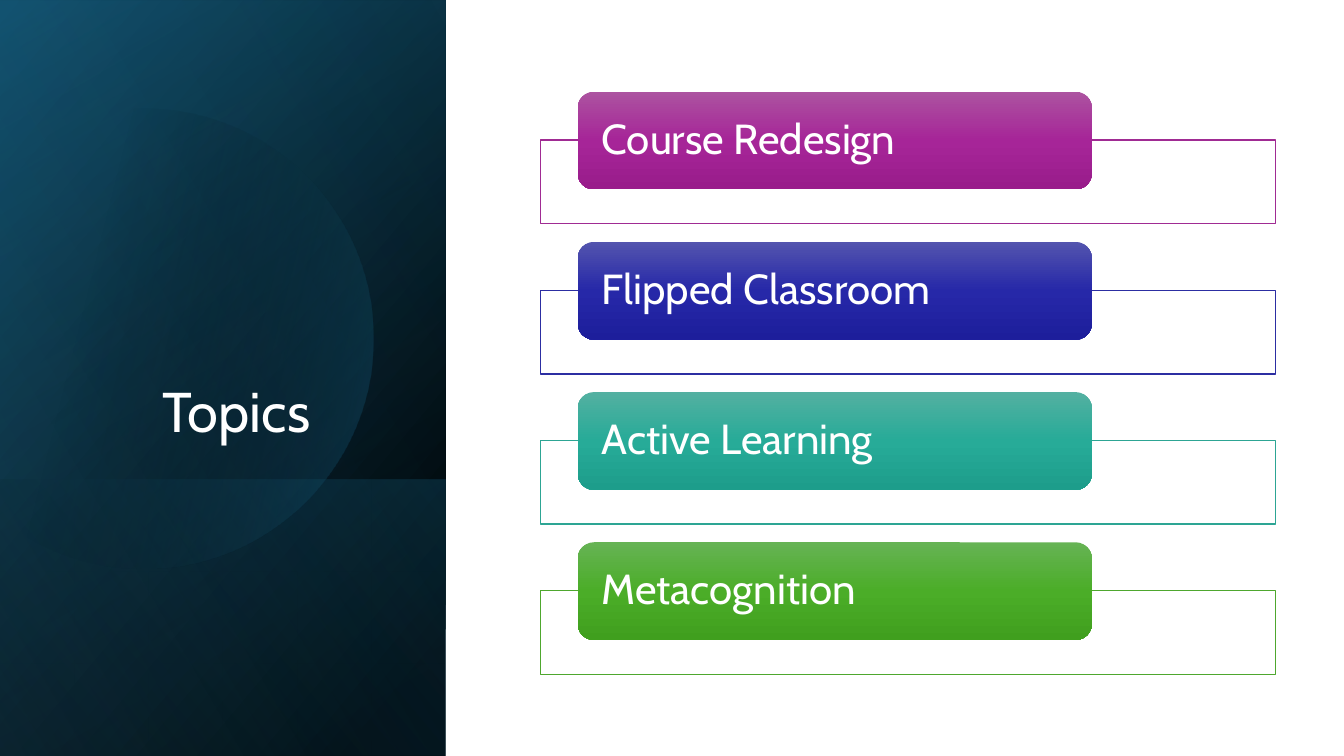
import math
from dataclasses import dataclass

from lxml import etree
from pptx import Presentation
from pptx import util as u
from pptx.dml.color import RGBColor
from pptx.enum import shapes, text
from pptx.oxml import ns

FONT = "Cabin"
WHITE = "FFFFFF"
TITLE_ONLY_LAYOUT = 5
CARD_TOP, CARD_STEP, FRAME_DROP = 0.91, 1.49, 0.48


@dataclass(frozen=True)
class Stop:
    position: int
    color: str
    opacity: int = 100


@dataclass(frozen=True)
class Panel:
    left: float
    top: float
    width: float
    height: float
    angle: int
    stops: tuple[Stop, ...]


@dataclass(frozen=True)
class Topic:
    name: str
    line: str
    gradient: tuple[str, str, str]


PANELS = (
    Panel(-1.54, 1.54, 7.5, 4.42, 50, (Stop(8, "000000"), Stop(100, "104862"))),
    Panel(-1.54, 1.55, 7.5, 4.42, 30, (Stop(0, "000000", 0), Stop(99, "156082", 46))),
    Panel(0.84, 3.92, 2.74, 4.42, 130, (Stop(2, "156082", 29), Stop(100, "000000", 30))),
)
GLOW = Panel(-1.54, 1.54, 7.5, 4.42, 120, (Stop(0, "000000", 0), Stop(99, "46B1E1", 11)))
DISC_STOPS = (Stop(29, "000000", 0), Stop(100, "156082", 43))
TOPICS = (
    Topic("Course Redesign", "A02B93", ("AC53A0", "A62598", "991C8B")),
    Topic("Flipped Classroom", "2C2EA2", ("5354AE", "2628A8", "1D1E9B")),
    Topic("Active Learning", "2DA594", ("53B0A1", "27AB98", "1D9D8B")),
    Topic("Metacognition", "4EA72E", ("66B354", "4BAD28", "409F1E")),
)


def rgb(color: str) -> RGBColor:
    return RGBColor.from_string(color)


def apply(target, values: dict) -> None:
    for name, value in values.items():
        setattr(target, name, value)


def fill_gradient(shape, angle: int, stops: tuple[Stop, ...]) -> None:
    """Fill without outline; the angle runs clockwise from left-to-right."""
    shape.shadow.inherit = False
    shape.line.fill.background()
    shape.fill.gradient()
    shape.fill.gradient_angle = 360 - angle
    stop_list = shape._element.spPr.find(".//" + ns.qn("a:gsLst"))
    for default_stop in list(stop_list):
        stop_list.remove(default_stop)
    for stop in stops:
        node = etree.SubElement(stop_list, ns.qn("a:gs"), pos=str(stop.position * 1000))
        color = etree.SubElement(node, ns.qn("a:srgbClr"), val=stop.color)
        if stop.opacity < 100:
            etree.SubElement(color, ns.qn("a:alpha"), val=str(stop.opacity * 1000))


def add_box(slide, kind, left: float, top: float, width: float, height: float):
    return slide.shapes.add_shape(
        kind, u.Inches(left), u.Inches(top), u.Inches(width), u.Inches(height)
    )


def add_panel(slide, panel: Panel) -> None:
    shape = add_box(slide, shapes.MSO_SHAPE.RECTANGLE,
                    panel.left, panel.top, panel.width, panel.height)
    shape.rotation = 90
    shape._element.spPr.get_or_add_xfrm().set("flipH", "1")
    fill_gradient(shape, panel.angle, panel.stops)


def add_disc(slide) -> None:
    """Draw a circle cut off by a vertical edge on its left."""
    center_x, center_y, radius = u.Inches(1.42), u.Inches(3.36), u.Inches(2.28)
    angles = [math.radians(degree) for degree in (-133, -90, 0, 90, 133)]
    points = [
        (round(center_x + radius * math.cos(angle)),
         round(center_y + radius * math.sin(angle)))
        for angle in angles
    ]
    builder = slide.shapes.build_freeform(*points[0])
    builder.add_line_segments(points[1:], close=True)
    disc = builder.convert_to_shape()

    origin_x, origin_y = points[0][0], points[1][1]
    segments = list(disc._element.spPr.iter(ns.qn("a:lnTo")))
    for i, segment in enumerate(segments):
        start, end = angles[i], angles[i + 1]
        reach = 4 / 3 * math.tan((end - start) / 4) * radius
        segment.tag = ns.qn("a:cubicBezTo")
        for j, (angle, pull) in enumerate(((start, reach), (end, -reach))):
            x = points[i + j][0] - origin_x - pull * math.sin(angle)
            y = points[i + j][1] - origin_y + pull * math.cos(angle)
            control = etree.Element(ns.qn("a:pt"), x=str(round(x)), y=str(round(y)))
            segment.insert(j, control)
    fill_gradient(disc, 14, DISC_STOPS)


def write(shape, words: str, size: int, alignment, anchor, margin: float) -> None:
    frame = shape.text_frame
    apply(frame, {
        "text": words, "word_wrap": True, "vertical_anchor": anchor,
        "auto_size": text.MSO_AUTO_SIZE.NONE,
        "margin_left": u.Inches(margin), "margin_right": u.Inches(margin),
        "margin_top": 0, "margin_bottom": 0,
    })
    paragraph = frame.paragraphs[0]
    apply(paragraph, {"alignment": alignment, "line_spacing": 0.9})
    font = paragraph.runs[0].font
    apply(font, {"name": FONT, "size": u.Pt(size)})
    font.color.rgb = rgb(WHITE)


def place_title(slide) -> None:
    """Move the title in front of the panels and format it."""
    title = slide.shapes.title
    apply(title, {"left": u.Inches(0.64), "top": u.Inches(1.84),
                  "width": u.Inches(3.41), "height": u.Inches(2.57)})
    write(title, "Topics", 40, text.PP_ALIGN.CENTER, text.MSO_ANCHOR.BOTTOM, 0.1)
    slide.shapes._spTree.append(title._element)


def add_topic(slide, topic: Topic, top: float) -> None:
    frame = add_box(slide, shapes.MSO_SHAPE.RECTANGLE, 5.36, top + FRAME_DROP, 7.29, 0.83)
    frame.shadow.inherit = False
    frame.fill.solid()
    frame.fill.fore_color.rgb = rgb(WHITE)
    frame.line.color.rgb = rgb(topic.line)
    frame.line.width = u.Pt(1)

    card = add_box(slide, shapes.MSO_SHAPE.ROUNDED_RECTANGLE, 5.73, top, 5.1, 0.97)
    stops = tuple(Stop(50 * i, color) for i, color in enumerate(topic.gradient))
    fill_gradient(card, 90, stops)
    write(card, topic.name, 30, text.PP_ALIGN.LEFT, text.MSO_ANCHOR.MIDDLE, 0.19)


def main() -> None:
    presentation = Presentation()
    apply(presentation, {"slide_width": u.Inches(13.33), "slide_height": u.Inches(7.5)})
    slide = presentation.slides.add_slide(presentation.slide_layouts[TITLE_ONLY_LAYOUT])
    for panel in PANELS:
        add_panel(slide, panel)
    add_disc(slide)
    add_panel(slide, GLOW)
    place_title(slide)
    for i, topic in enumerate(TOPICS):
        add_topic(slide, topic, CARD_TOP + i * CARD_STEP)
    presentation.save("out.pptx")


if __name__ == "__main__":
    main()
